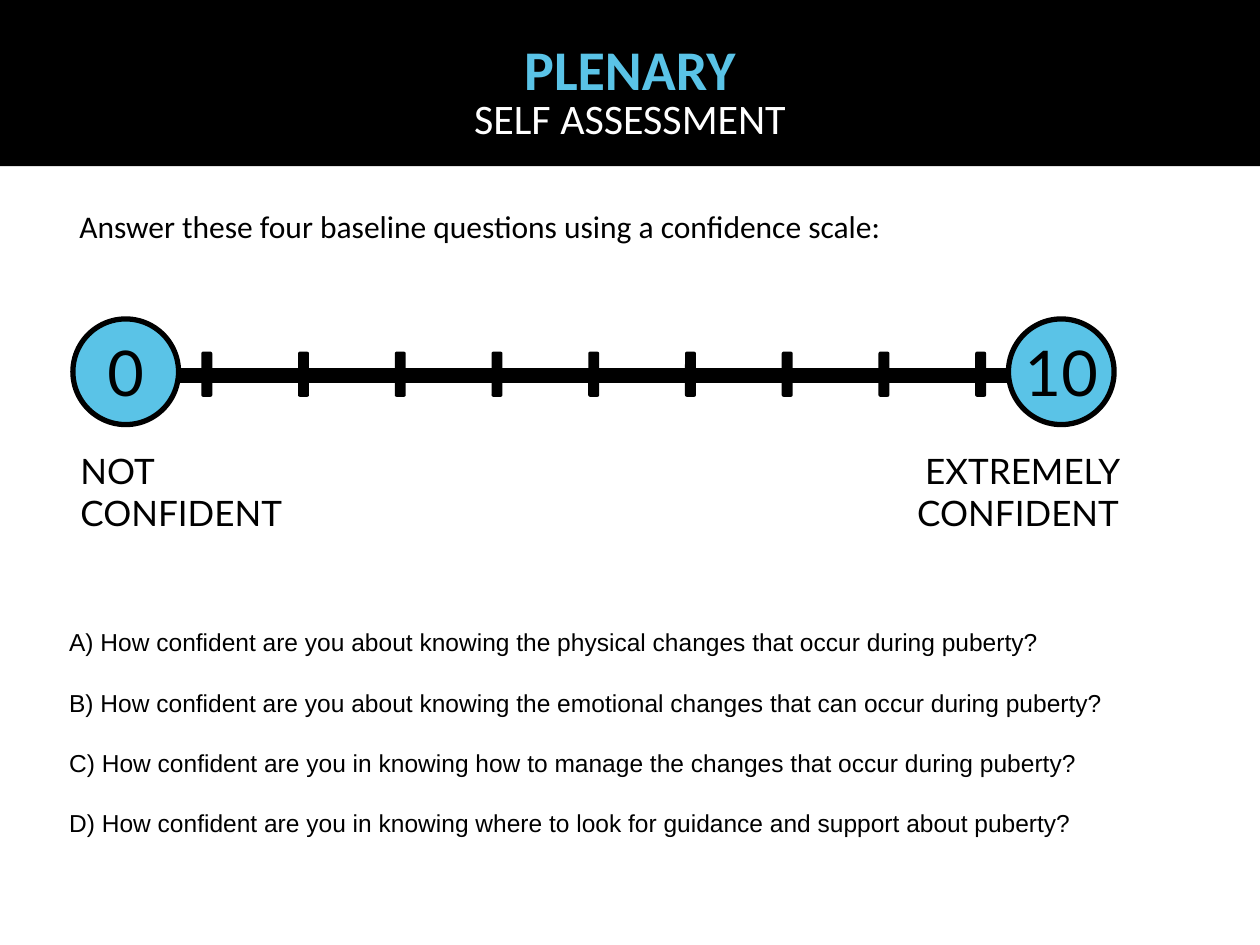
import pptx
from pptx.dml.color import RGBColor
from pptx.enum.shapes import MSO_SHAPE
from pptx.enum.text import MSO_ANCHOR, MSO_AUTO_SIZE, PP_ALIGN
from pptx.util import Cm, Pt

COLOURS = {"black": "000000", "white": "FFFFFF", "blue": "5AC3E7"}

QUESTIONS = [
    "A) How confident are you about knowing the physical changes that occur during puberty?",
    "B) How confident are you about knowing the emotional changes that can occur during puberty?",
    "C) How confident are you in knowing how to manage the changes that occur during puberty?",
    "D) How confident are you in knowing where to look for guidance and support about puberty?",
]


def colour(name):
    return RGBColor.from_string(COLOURS[name])


def place(shape, left, top, width, height):
    shape.left, shape.top = Cm(left), Cm(top)
    shape.width, shape.height = Cm(width), Cm(height)


def write(shape, lines, font, size, ink="black", bold=False,
          align=PP_ALIGN.LEFT, anchor=MSO_ANCHOR.TOP, gap=0):
    """Fill a shape with one paragraph per line, all in one style."""
    frame = shape.text_frame
    frame.text = "\n".join(lines)
    frame.word_wrap = True
    frame.auto_size = MSO_AUTO_SIZE.NONE
    frame.vertical_anchor = anchor
    for para in frame.paragraphs:
        para.alignment = align
        para.space_before = Pt(0)
        para.space_after = Pt(gap)
        para.font.name = font
        para.font.size = Pt(size)
        para.font.bold = bold
        para.font.color.rgb = colour(ink)


def add_label(page, box, text, font, size, **style):
    label = page.shapes.add_textbox(0, 0, 0, 0)
    place(label, *box)
    write(label, [text], font, size, **style)


def add_block(page, kind, box, fill):
    block = page.shapes.add_shape(kind, 0, 0, 0, 0)
    place(block, *box)
    block.shadow.inherit = False
    block.fill.solid()
    block.fill.fore_color.rgb = colour(fill)
    block.line.fill.background()
    return block


def add_header(page, left, top, width, height):
    band = add_block(page, MSO_SHAPE.RECTANGLE, (left, top, width, height), "black")
    title = page.shapes.title
    band.element.addnext(title.element)
    place(title, left, top + 0.56, width, 1.63)
    write(title, ["PLENARY"], "Calibri", 32, ink="blue", bold=True,
          align=PP_ALIGN.CENTER)
    add_label(page, (left, top + 1.75, width, 1.27), "SELF ASSESSMENT", "Calibri", 24,
              ink="white", align=PP_ALIGN.CENTER)


def add_scale(page, left, top, width, height):
    """Draw a line with nine ticks between two numbered circles, with end labels."""
    add_block(page, MSO_SHAPE.RECTANGLE,
              (left + 1.76, top + 0.99, width - 3.29, 0.3), "black")
    for step in range(9):
        add_block(page, MSO_SHAPE.ROUNDED_RECTANGLE,
                  (left + 2.59 + 1.95 * step, top + 0.66, 0.22, 0.91), "black")

    right = left + width
    ends = [
        ("0", left, "NOT CONFIDENT", left - 0.1, 4.83, PP_ALIGN.LEFT),
        ("10", right - height, "EXTREMELY CONFIDENT", right - 5.7, 6.05, PP_ALIGN.RIGHT),
    ]
    for number, circle_left, text, text_left, text_width, align in ends:
        circle = add_block(page, MSO_SHAPE.OVAL,
                           (circle_left, top, height, height), "blue")
        circle.line.color.rgb = colour("black")
        circle.line.width = Pt(3)
        frame = circle.text_frame
        frame.margin_left = frame.margin_right = 0
        frame.margin_top = frame.margin_bottom = 0
        write(circle, [number], "Lato", 36, align=PP_ALIGN.CENTER,
              anchor=MSO_ANCHOR.MIDDLE)
        add_label(page, (text_left, top + 2.51, text_width, 1.96), text, "Lato", 20,
                  align=align)


def add_questions(page, left, top, width, height):
    body = page.placeholders[1]
    place(body, left, top, width, height)
    write(body, QUESTIONS, "Arial", 14, gap=17.6)
    for para in body.text_frame.paragraphs:
        properties = para._p.get_or_add_pPr()
        properties.set("marL", "0")
        properties.set("indent", "0")
        no_bullet = pptx.oxml.parse_xml(
            '<a:buNone xmlns:a="http://schemas.openxmlformats.org/drawingml/2006/main"/>')
        properties.find(pptx.oxml.ns.qn("a:defRPr")).addprevious(no_bullet)


def main():
    deck = pptx.Presentation()
    deck.slide_width, deck.slide_height = Cm(25.4), Cm(19.05)
    page = deck.slides.add_slide(deck.slide_layouts[1])
    add_header(page, 0, 0, 25.4, 3.35)
    add_label(page, (1.35, 4.04, 22.86, 0.79),
              "Answer these four baseline questions using a confidence scale:",
              "Calibri", 18)
    add_scale(page, 1.47, 6.43, 20.99, 2.13)
    add_questions(page, 1.14, 12.52, 22.86, 4.8)
    deck.save("out.pptx")


if __name__ == "__main__":
    main()
